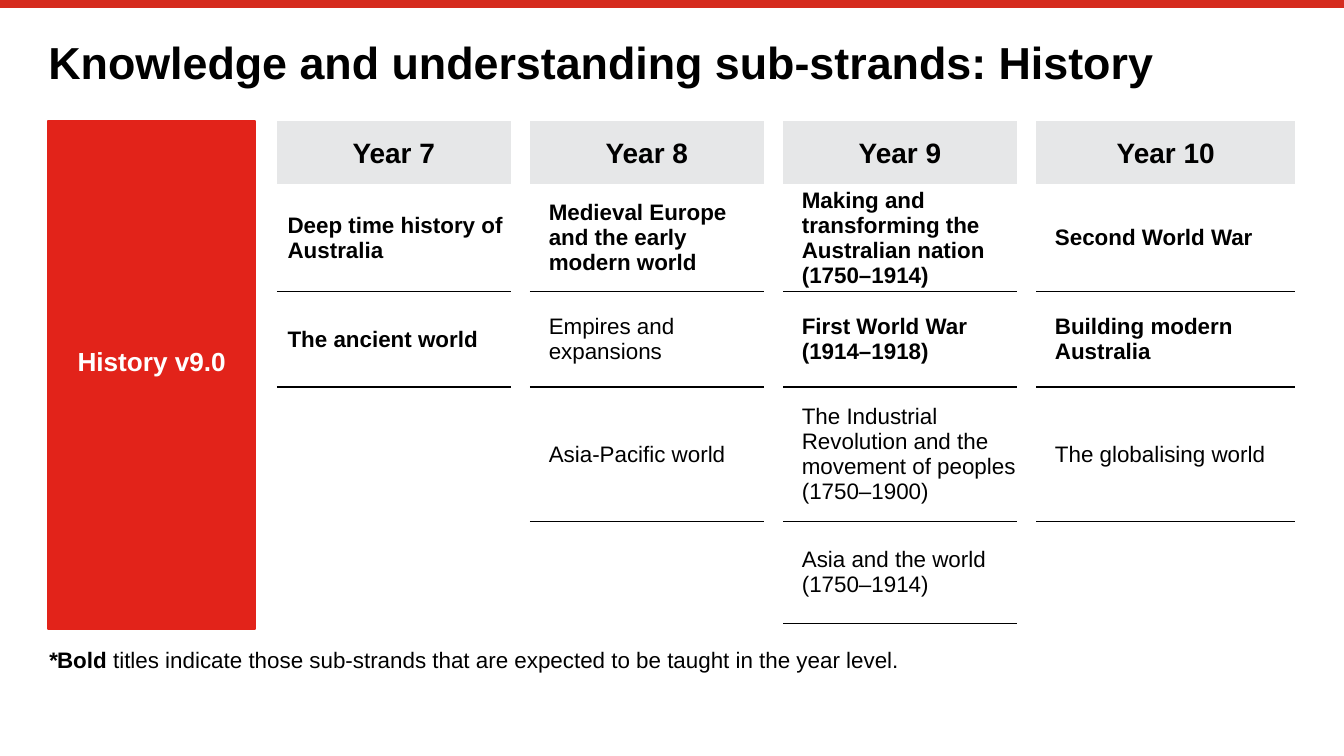
from lxml import etree
from pptx import Presentation
from pptx.dml.color import RGBColor
from pptx.enum.shapes import MSO_CONNECTOR, MSO_SHAPE
from pptx.enum.text import MSO_ANCHOR as ANCHOR, PP_ALIGN as ALIGN
from pptx.oxml.ns import qn
from pptx.util import Inches, Pt

COLORS = {"band": "D52B1E", "panel": "E2231A", "header": "E6E7E8",
          "text": "000000", "white": "FFFFFF"}
FONT = "Arial"

# Year, column width, left indent, sub-strands as (title, bold)
YEARS = [
    ("Year 7", 1.74, 0.08, [("Deep time history of Australia", True),
                            ("The ancient world", True)]),
    ("Year 8", 1.74, 0.14, [("Medieval Europe and the early modern world", True),
                            ("Empires and expansions", False),
                            ("Asia-Pacific world", False)]),
    ("Year 9", 1.74, 0.14, [("Making and transforming the Australian nation (1750–1914)", True),
                            ("First World War (1914–1918)", True),
                            ("The Industrial Revolution and the movement of peoples (1750–1900)", False),
                            ("Asia and the world (1750–1914)", False)]),
    ("Year 10", 1.93, 0.14, [("Second World War", True),
                             ("Building modern Australia", True),
                             ("The globalising world", False)]),
]
TABLE_WIDTH = 7.58
GAP = (TABLE_WIDTH - sum(width for _, width, _, _ in YEARS)) / (len(YEARS) - 1)
ROW_HEIGHTS = [0.47, 0.8, 0.71, 1, 0.76]


def rgb(name):
    return RGBColor.from_string(COLORS[name])


def add_run(p, text, size, bold=False, italic=False, color="text"):
    r = p.add_run()
    r.text = text
    font = r.font
    font.name, font.size, font.bold, font.italic = FONT, Pt(size), bold, italic
    font.color.rgb = rgb(color)


def set_margins(frame, x=0, y=0):
    frame.margin_left = frame.margin_right = Inches(x)
    frame.margin_top = frame.margin_bottom = Inches(y)


def add_text(s, left, top, width, height, anchor=ANCHOR.TOP):
    """Add an empty wrapped text box and return its first paragraph."""
    tf = s.shapes.add_textbox(Inches(left), Inches(top),
                              Inches(width), Inches(height)).text_frame
    tf.word_wrap = True
    tf.vertical_anchor = anchor
    set_margins(tf)
    return tf.paragraphs[0]


def add_band(s, y, width, weight):
    line = s.shapes.add_connector(MSO_CONNECTOR.STRAIGHT, 0, Inches(y),
                                  Inches(width), Inches(y))
    line.line.color.rgb = rgb("band")
    line.line.width = Pt(weight)
    etree.SubElement(line._element.spPr, qn("a:effectLst"))


def add_panel(s, left, top, width, height):
    sp = s.shapes.add_shape(MSO_SHAPE.RECTANGLE, Inches(left), Inches(top),
                            Inches(width), Inches(height))
    sp.shadow.inherit = False
    sp.fill.solid()
    sp.fill.fore_color.rgb = rgb("panel")
    sp.line.color.rgb = rgb("panel")
    sp.line.width = Pt(1)


def set_borders(cell, ruled):
    """Rule the sides named in ruled and clear the others."""
    tc_pr = cell._tc.get_or_add_tcPr()
    for side in "LRTB":
        ln = etree.SubElement(tc_pr, qn(f"a:ln{side}"), w=str(Pt(1)))
        if side in ruled:
            fill = etree.SubElement(ln, qn("a:solidFill"))
            etree.SubElement(fill, qn("a:srgbClr"), val=COLORS["text"])
        else:
            etree.SubElement(ln, qn("a:noFill"))


def fill_header(cell, text):
    set_margins(cell, 0.05)
    cell.fill.solid()
    cell.fill.fore_color.rgb = rgb("header")
    p = cell.text_frame.paragraphs[0]
    p.alignment = ALIGN.CENTER
    p.line_spacing = 1.1
    add_run(p, text, 15, bold=True)


def fill_strand(cell, text, bold, indent):
    p = cell.text_frame.paragraphs[0]
    p_pr = p._p.get_or_add_pPr()
    p_pr.set("marL", str(Inches(indent)))
    p_pr.set("indent", "0")
    add_run(p, text, 12, bold=bold)


def add_strand_table(s, left, top):
    # Year columns alternate with narrow gap columns
    widths = [w for _, width, _, _ in YEARS for w in (width, GAP)][:-1]
    table = s.shapes.add_table(len(ROW_HEIGHTS), len(widths), Inches(left), Inches(top),
                               Inches(TABLE_WIDTH), Inches(sum(ROW_HEIGHTS))).table
    table.first_row = table.horz_banding = False
    for column, width in zip(table.columns, widths):
        column.width = Inches(width)
    for row, height in zip(table.rows, ROW_HEIGHTS):
        row.height = Inches(height)

    for col in range(len(widths)):
        year, _, indent, strands = YEARS[col // 2]
        count = 0 if col % 2 else len(strands)
        for row in range(len(ROW_HEIGHTS)):
            cell = table.cell(row, col)
            cell.vertical_anchor = ANCHOR.MIDDLE
            set_margins(cell)
            top_rule = "T" if 2 <= row <= count + 1 else ""
            bottom_rule = "B" if 1 <= row <= count else ""
            set_borders(cell, top_rule + bottom_rule)
            cell.fill.background()
            if row == 0 and count:
                fill_header(cell, year)
            elif 1 <= row <= count:
                fill_strand(cell, *strands[row - 1], indent)


def main():
    # Widescreen 16:9 slide
    prs = Presentation()
    prs.slide_width = Inches(10)
    prs.slide_height = Inches(10 * 9 / 16)
    s = prs.slides.add_slide(prs.slide_layouts[6])

    # Top band and title
    add_band(s, 0.03, 10, 4.2)
    p = add_text(s, 0.36, 0.3, 9.29, 0.39)
    p.line_spacing = 0.9
    add_run(p, "Knowledge and understanding sub-strands: History", 24, bold=True)

    # Footnote
    p = add_text(s, 0.36, 4.81, 9.29, 0.21)
    add_run(p, "*", 12, bold=True, italic=True)
    add_run(p, "Bold", 12, bold=True)
    add_run(p, " titles indicate those sub-strands that are expected to be "
               "taught in the year level.", 12)

    # Sub-strands by year
    add_strand_table(s, 2.06, 0.9)

    # Curriculum panel and its label
    add_panel(s, 0.36, 0.9, 1.54, 3.78)
    p = add_text(s, 0.36, 2.52, 1.54, 0.34, ANCHOR.MIDDLE)
    p.alignment = ALIGN.CENTER
    add_run(p, "History v9.0", 14, bold=True, color="white")

    prs.save("out.pptx")


if __name__ == "__main__":
    main()
